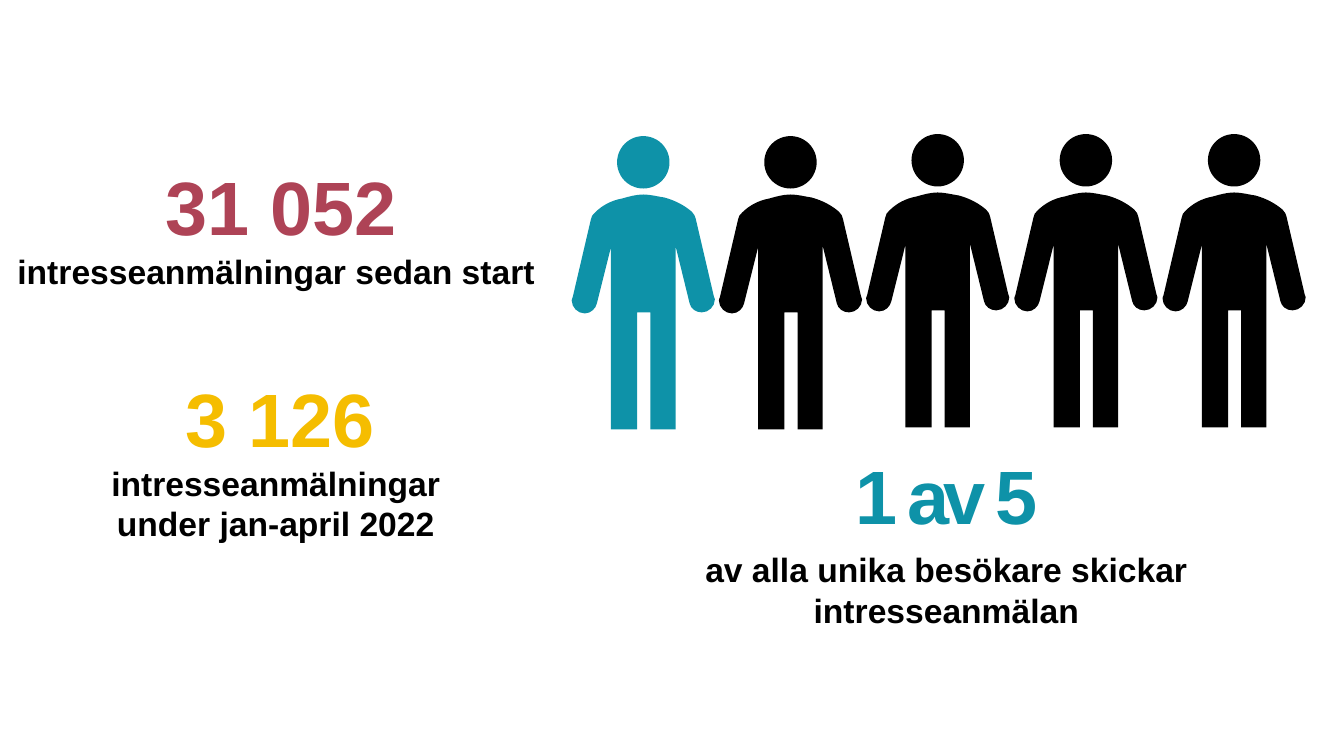
from dataclasses import dataclass

from lxml import etree
from pptx import Presentation
from pptx import util as u
from pptx.dml.color import RGBColor
from pptx.enum import shapes, text
from pptx.oxml import ns

FONT = "Arial"
BLACK, TEAL, RED, YELLOW = "000000", "0E92A8", "AE4356", "F5BD00"
HEAD_SIZE, HEAD_INSET, BODY_DROP = 0.52, 0.45, 0.58

# Body outline in hundredths of an inch: a pair is a line, a six is a Bézier curve.
BODY_START = (141, 101)
BODY_SEGMENTS = [
    (123, 24),
    (123, 22, 121, 19, 119, 17),
    (112, 11, 103, 6, 92, 3),
    (85, 2, 78, 0, 71, 0),
    (64, 0, 57, 2, 50, 4),
    (39, 6, 30, 11, 23, 18),
    (21, 20, 19, 22, 19, 25),
    (1, 102),
    (1, 102, 0, 104, 0, 105),
    (0, 112, 6, 118, 13, 118),
    (19, 118, 24, 113, 25, 108),
    (39, 52), (39, 233), (65, 233), (65, 117),
    (78, 117), (78, 233), (103, 233), (103, 51),
    (117, 108),
    (118, 113, 123, 117, 129, 117),
    (136, 117, 142, 111, 142, 104),
    (142, 103, 141, 102, 141, 101),
]


@dataclass
class Person:
    left: float
    top: float
    color: str = BLACK


@dataclass
class Line:
    words: str
    size: int = 24
    color: str = BLACK
    spacing: int = 0


@dataclass
class TextBlock:
    left: float
    top: float
    width: float
    height: float
    lines: list[Line]


PEOPLE = [Person(7.13, 1.35), Person(8.59, 1.33), Person(10.06, 1.33),
          Person(5.67, 1.35, TEAL), Person(11.53, 1.33)]

BLOCKS = [
    TextBlock(6.87, 4.4, 5.04, 1.01, [Line("1 av 5", 54, TEAL, spacing=-4)]),
    TextBlock(6.59, 5.4, 5.59, 1.21,
              [Line("av alla unika besökare skickar intresseanmälan")]),
    TextBlock(0.37, 3.64, 4.82, 1.82,
              [Line("3 126", 54, YELLOW), Line("intresseanmälningar "),
               Line("under jan-april 2022 ")]),
    TextBlock(0, 1.54, 5.57, 1.41,
              [Line("31 052", 54, RED), Line("intresseanmälningar sedan start ")]),
]


def rgb(color: str) -> RGBColor:
    return RGBColor.from_string(color)


def paint(sp, color: str) -> None:
    sp.shadow.inherit = False
    sp.fill.solid()
    sp.fill.fore_color.rgb = rgb(color)
    sp.line.fill.background()


def bend_lines(sp) -> None:
    """Turn the straight pieces of a body into curves where the outline has them."""
    lines = list(sp._element.iter(ns.qn("a:lnTo")))
    for line, segment in zip(lines, BODY_SEGMENTS):
        if len(segment) == 6:
            curve = etree.Element(ns.qn("a:cubicBezTo"))
            for x, y in zip(segment[::2], segment[1::2]):
                etree.SubElement(curve, ns.qn("a:pt"), x=str(x), y=str(y))
            line.getparent().replace(line, curve)


def add_person(s, person: Person) -> None:
    group = s.shapes.add_group_shape()
    head = group.shapes.add_shape(
        shapes.MSO_SHAPE.OVAL, u.Inches(person.left + HEAD_INSET),
        u.Inches(person.top), u.Inches(HEAD_SIZE), u.Inches(HEAD_SIZE))
    outline = group.shapes.build_freeform(*BODY_START, scale=u.Inches(0.01))
    outline.add_line_segments([segment[-2:] for segment in BODY_SEGMENTS], close=True)
    body = outline.convert_to_shape(u.Inches(person.left), u.Inches(person.top + BODY_DROP))
    bend_lines(body)
    for sp in (head, body):
        paint(sp, person.color)


def add_text(s, block: TextBlock) -> None:
    sp = s.shapes.add_textbox(*(u.Inches(v) for v in (
        block.left, block.top, block.width, block.height)))
    tf = sp.text_frame
    tf.word_wrap = True
    tf.auto_size = text.MSO_AUTO_SIZE.SHAPE_TO_FIT_TEXT
    for i, line in enumerate(block.lines):
        p = tf.add_paragraph() if i else tf.paragraphs[0]
        p.alignment = text.PP_ALIGN.CENTER
        r = p.add_run()
        r.text = line.words
        p.font.name = FONT
        p.font.size = u.Pt(line.size)
        p.font.bold = True
        p.font.color.rgb = rgb(line.color)
        if line.spacing:
            r.font._element.set("spc", str(line.spacing * 100))


def main() -> None:
    prs = Presentation()
    prs.slide_width, prs.slide_height = u.Inches(13.33), u.Inches(7.5)
    s = prs.slides.add_slide(prs.slide_layouts.get_by_name("Blank"))
    for person in PEOPLE:
        add_person(s, person)
    for block in BLOCKS:
        add_text(s, block)
    prs.save("out.pptx")


if __name__ == "__main__":
    main()
